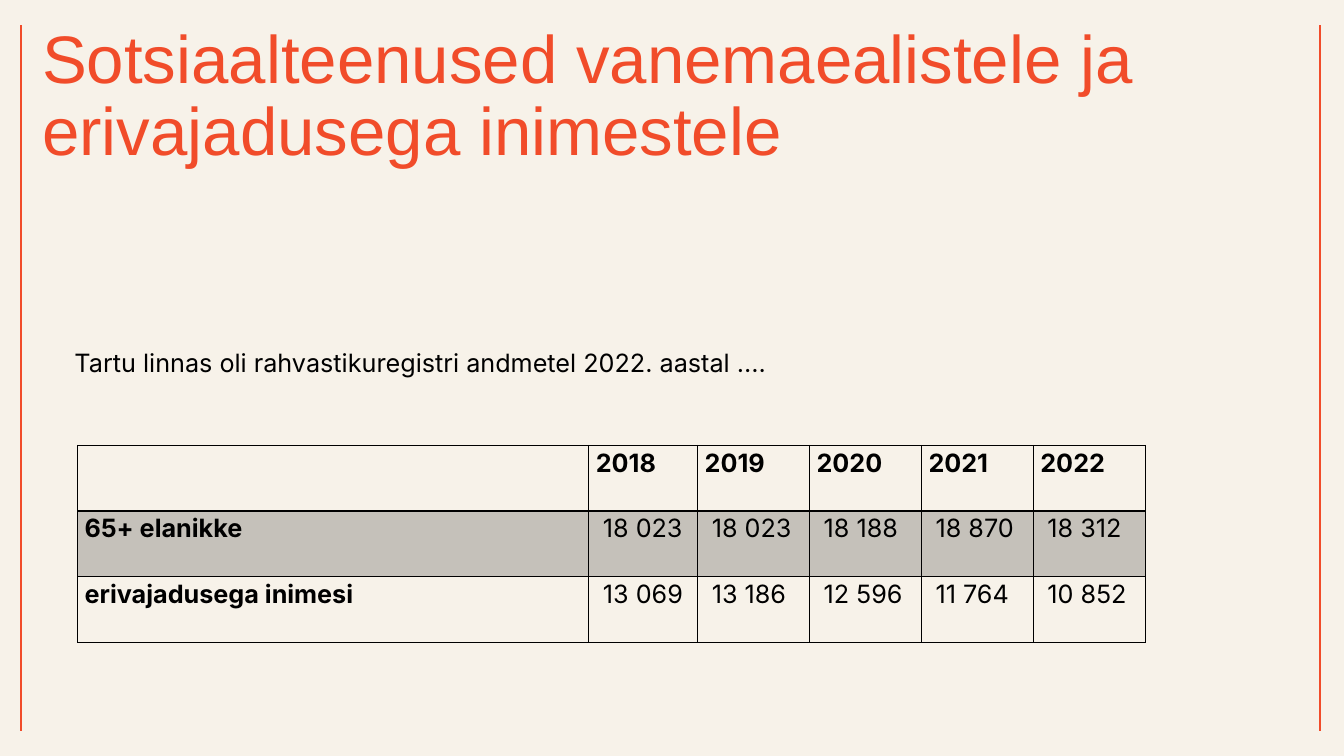
from dataclasses import dataclass

import pptx
import pptx.dml.color
import pptx.enum.shapes
import pptx.enum.text
import pptx.oxml
import pptx.oxml.ns
import pptx.util
from pptx.util import Inches

RGBColor = pptx.dml.color.RGBColor
CREAM = RGBColor(0xF7, 0xF2, 0xE9)
ORANGE = RGBColor(0xF1, 0x4C, 0x2A)
BLACK = RGBColor(0, 0, 0)
JUSTIFY = pptx.enum.text.PP_ALIGN.JUSTIFY
DRAWING_NS = pptx.oxml.ns.nsdecls("a")

RULE_XS = (0.21, 13.09)
YEARS = ("2018", "2019", "2020", "2021", "2022")
COLUMN_WIDTHS = (5.07, 1.08, 1.11, 1.11, 1.11, 1.11)
ROW_HEIGHT = 0.65
CELL_MARGIN = 0.07
NUMBER_INDENT = 0.14


@dataclass(frozen=True)
class TableRow:
    label: str
    values: tuple[str, ...]
    is_header: bool = False
    shaded: bool = False
    top_border: float = 1
    bottom_border: float = 1


@dataclass(frozen=True)
class TextBlock:
    text: str
    left: float
    top: float
    width: float
    height: float
    size: float
    font: str
    color: RGBColor
    top_margin: float = 0
    line_spacing: float = 1


ROWS = (
    TableRow("", YEARS, is_header=True, bottom_border=2),
    TableRow("65+ elanikke", ("18 023", "18 023", "18 188", "18 870", "18 312"),
             shaded=True, top_border=2),
    TableRow("erivajadusega inimesi",
             ("13 069", "13 186", "12 596", "11 764", "10 852")),
)

TITLE = TextBlock("Sotsiaalteenused vanemaealistele ja erivajadusega inimestele",
                  0.32, 0.25, 12.19, 2.27, 48, "Arial", ORANGE, line_spacing=0.9)
INTRO = TextBlock("Tartu linnas oli rahvastikuregistri andmetel 2022. aastal ….",
                  0.64, 3.4, 12.69, 0.4, 18, "Inter", BLACK, top_margin=0.05)


def add_run(paragraph, text: str, size: float, font: str, color: RGBColor,
            bold: bool = False) -> None:
    run = paragraph.add_run()
    run.text = text
    run.font.size = pptx.util.Pt(size)
    run.font.name = font
    run.font.bold = bold
    run.font.color.rgb = color


def add_text(slide, block: TextBlock) -> None:
    box = slide.shapes.add_textbox(Inches(block.left), Inches(block.top),
                                   Inches(block.width), Inches(block.height))
    frame = box.text_frame
    frame.word_wrap = True
    frame.margin_top = frame.margin_bottom = Inches(block.top_margin)
    paragraph = frame.paragraphs[0]
    paragraph.line_spacing = block.line_spacing
    add_run(paragraph, block.text, block.size, block.font, block.color)


def add_side_rule(slide, x: float) -> None:
    rule = slide.shapes.add_connector(pptx.enum.shapes.MSO_CONNECTOR.STRAIGHT,
                                      Inches(x), Inches(0.25), Inches(x), Inches(7.25))
    rule.line.color.rgb = ORANGE
    rule.line.width = pptx.util.Pt(1.5)
    rule._element.spPr.append(pptx.oxml.parse_xml(f"<a:effectLst {DRAWING_NS}/>"))


def set_borders(cell, row: TableRow) -> None:
    properties = cell._tc.get_or_add_tcPr()
    widths = {"lnL": 1, "lnR": 1, "lnT": row.top_border, "lnB": row.bottom_border}
    for side, width in widths.items():
        properties.append(pptx.oxml.parse_xml(
            f'<a:{side} {DRAWING_NS} w="{pptx.util.Pt(width)}"><a:solidFill>'
            f'<a:srgbClr val="{BLACK}"/></a:solidFill></a:{side}>'))


def set_background(cell, shaded: bool) -> None:
    """Tint a shaded cell with 20 % black; leave any other cell clear."""
    if not shaded:
        cell.fill.background()
        return
    cell.fill.solid()
    cell.fill.fore_color.rgb = BLACK
    color = cell._tc.tcPr.find(
        f"{pptx.oxml.ns.qn('a:solidFill')}/{pptx.oxml.ns.qn('a:srgbClr')}")
    color.append(pptx.oxml.parse_xml(f'<a:alpha {DRAWING_NS} val="20000"/>'))


def fill_cell(cell, text: str, row: TableRow, is_label: bool) -> None:
    bold = is_label or row.is_header
    cell.margin_left = Inches(CELL_MARGIN if bold else NUMBER_INDENT)
    cell.margin_right = Inches(CELL_MARGIN)
    cell.margin_top = cell.margin_bottom = 0
    set_borders(cell, row)
    set_background(cell, row.shaded)
    if text:
        paragraph = cell.text_frame.paragraphs[0]
        paragraph.alignment = JUSTIFY
        paragraph.line_spacing = 1.07
        paragraph.space_after = pptx.util.Pt(8)
        add_run(paragraph, text, 18, "Inter", BLACK, bold)


def add_population_table(slide) -> None:
    table = slide.shapes.add_table(
        len(ROWS), len(COLUMN_WIDTHS), Inches(0.77), Inches(4.42),
        Inches(sum(COLUMN_WIDTHS)), Inches(ROW_HEIGHT * len(ROWS))).table
    table.first_row = table.horz_banding = False
    for column, width in zip(table.columns, COLUMN_WIDTHS):
        column.width = Inches(width)
    for row_index, row in enumerate(ROWS):
        table.rows[row_index].height = Inches(ROW_HEIGHT)
        for column_index, text in enumerate((row.label, *row.values)):
            fill_cell(table.cell(row_index, column_index), text, row,
                      is_label=column_index == 0)


def main() -> None:
    presentation = pptx.Presentation()
    presentation.slide_width = Inches(13.33)
    presentation.slide_height = Inches(7.5)
    slide = presentation.slides.add_slide(presentation.slide_layouts[6])
    slide.background.fill.solid()
    slide.background.fill.fore_color.rgb = CREAM
    for x in RULE_XS:
        add_side_rule(slide, x)
    for block in (TITLE, INTRO):
        add_text(slide, block)
    add_population_table(slide)
    presentation.save("out.pptx")


if __name__ == "__main__":
    main()
